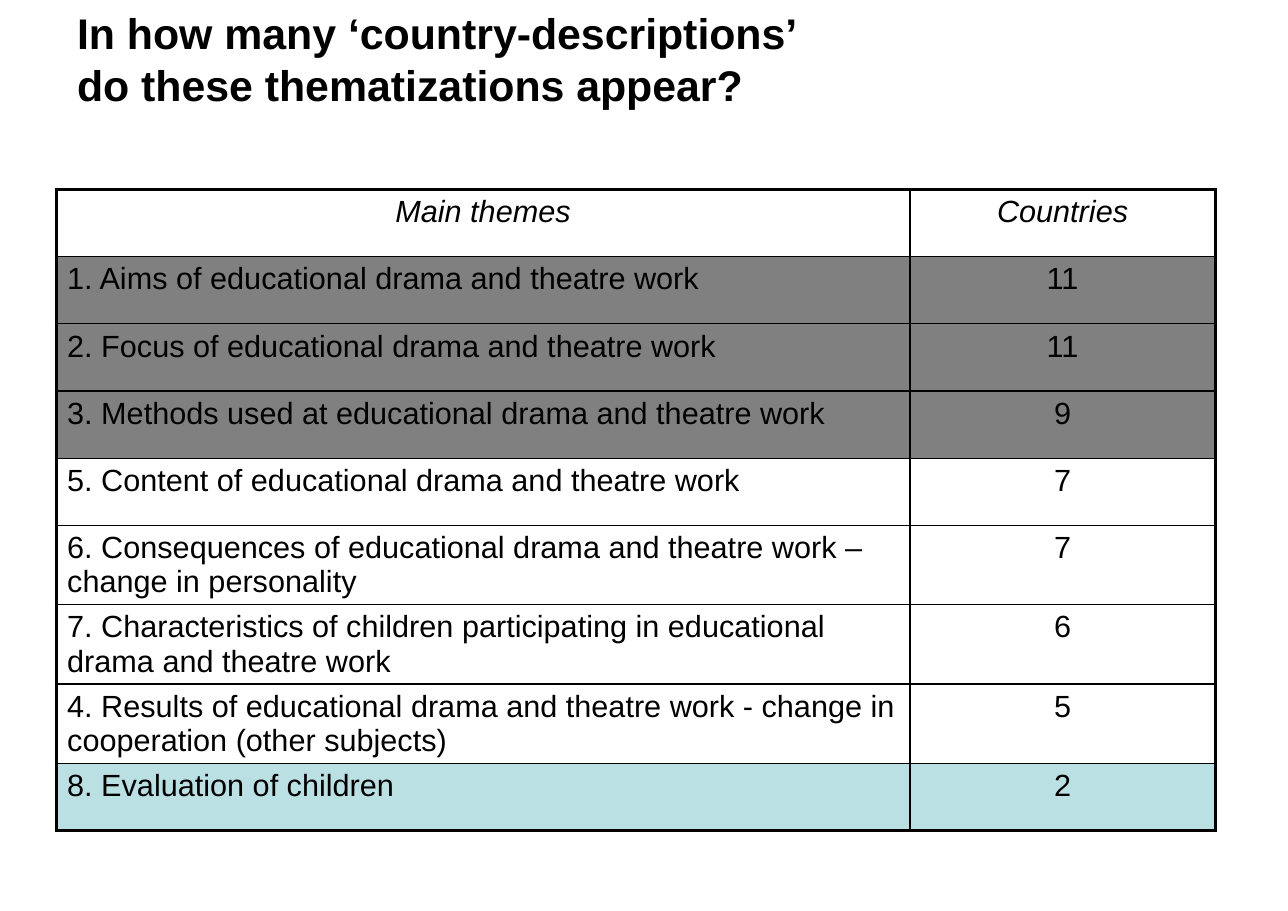
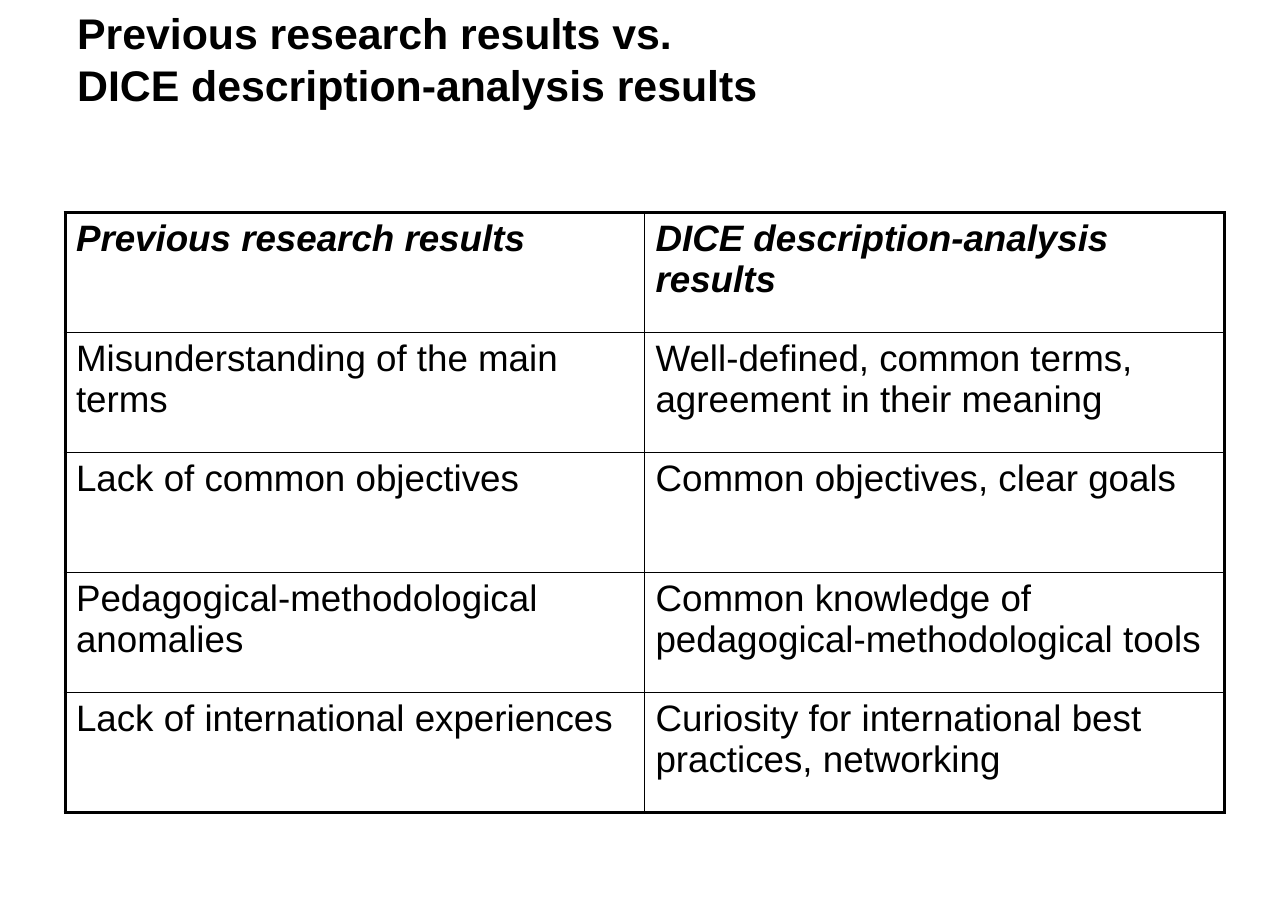
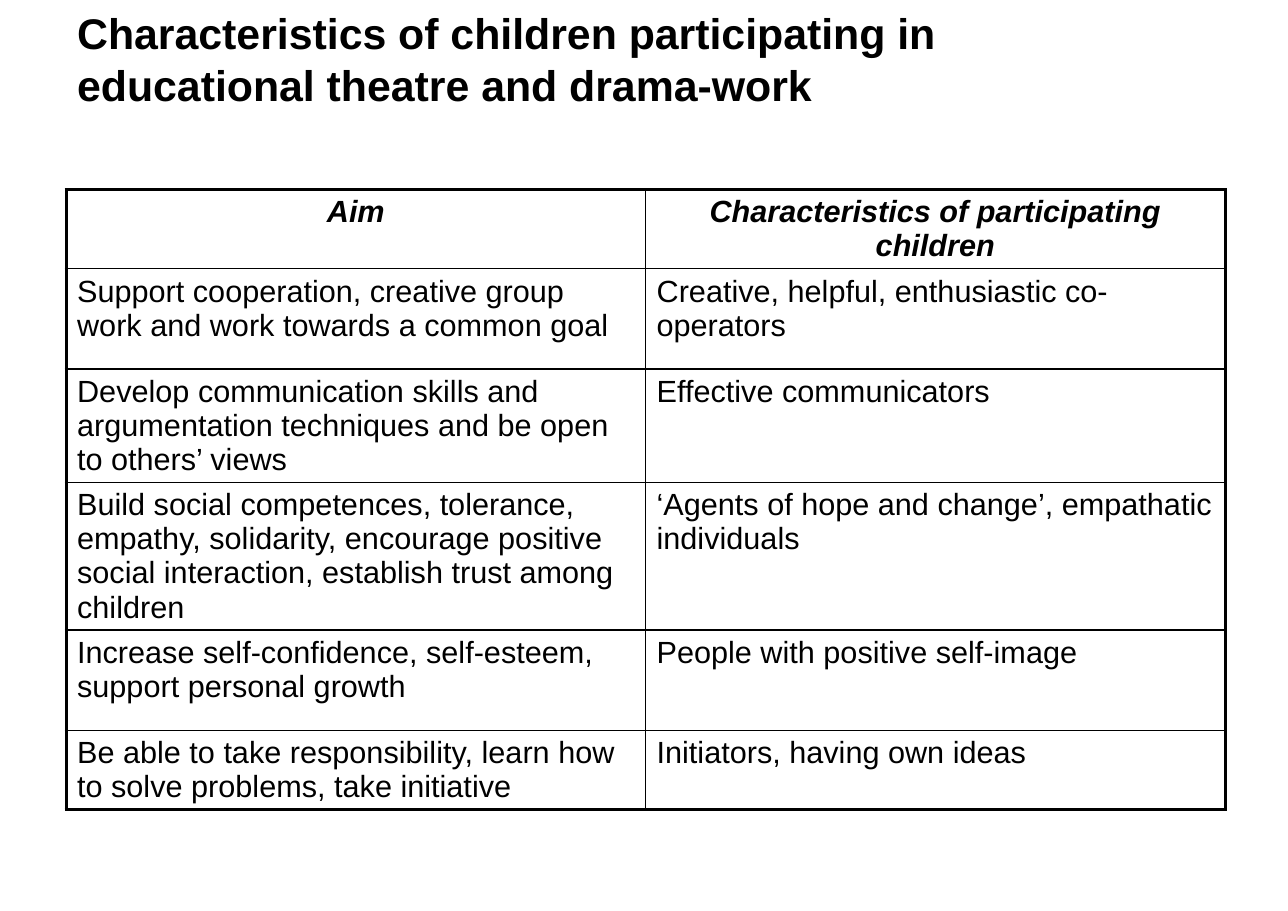
from pptx import Presentation
from pptx.dml.color import RGBColor
from pptx.enum.text import MSO_ANCHOR, MSO_AUTO_SIZE, PP_ALIGN
from pptx.oxml import parse_xml
from pptx.oxml.ns import nsdecls
from pptx.util import Emu, Pt

PX = 9144  # one px is a hundredth of an inch
FONT = "Arial"
BLACK = RGBColor(0x00, 0x00, 0x00)
GRAY = RGBColor(0x80, 0x80, 0x80)
AQUA = RGBColor(0xBB, 0xE0, 0xE3)
OUTER, INNER = Pt(2.25), Pt(1)
LEFT, CENTER = PP_ALIGN.LEFT, PP_ALIGN.CENTER

THEMES = [
    ("Main themes", "Countries"),
    ("1. Aims of educational drama and theatre work", "11"),
    ("2. Focus of educational drama and theatre work", "11"),
    ("3. Methods used at educational drama and theatre work", "9"),
    ("5. Content of educational drama and theatre work", "7"),
    ("6. Consequences of educational drama and theatre work – change in personality", "7"),
    ("7. Characteristics of children participating in educational drama and theatre work", "6"),
    ("4. Results of educational drama and theatre work - change in cooperation (other subjects)", "5"),
    ("8. Evaluation of children", "2"),
]
THEME_FILLS = {1: GRAY, 2: GRAY, 3: GRAY, 8: AQUA}

RESULTS = [
    ("Previous research results", "DICE description-analysis results"),
    ("Misunderstanding of the main terms",
     "Well-defined, common terms, agreement in their meaning"),
    ("Lack of common objectives", "Common objectives, clear goals"),
    ("Pedagogical-methodological anomalies",
     "Common knowledge of pedagogical-methodological tools"),
    ("Lack of international experiences",
     "Curiosity for international best practices, networking"),
]

AIMS = [
    ("Aim", "Characteristics of participating children"),
    ("Support cooperation, creative group work and work towards a common goal",
     "Creative, helpful, enthusiastic co-operators"),
    ("Develop communication skills and argumentation techniques and be open to others’ views",
     "Effective communicators"),
    ("Build social competences, tolerance, empathy, solidarity, encourage positive "
     "social interaction, establish trust among children",
     "‘Agents of hope and change’, empathatic individuals"),
    ("Increase self-confidence, self-esteem, support personal growth",
     "People with positive self-image"),
    ("Be able to take responsibility, learn how to solve problems, take initiative",
     "Initiators, having own ideas"),
]


def px(n):
    return Emu(n * PX)


def format_text(tf, size, align, bold=False, italic=False):
    for p in tf.paragraphs:
        p.alignment = align
        for r in p.runs:
            r.font.name, r.font.size = FONT, Pt(size)
            r.font.bold, r.font.italic = bold, italic
            r.font.color.rgb = BLACK


def add_titled_slide(prs, *lines):
    s = prs.slides.add_slide(prs.slide_layouts[5])
    title = s.shapes.title
    title.left, title.top, title.width, title.height = px(59), px(3), px(1052), px(100)
    tf = title.text_frame
    tf.text = "\v".join(lines)
    tf.auto_size = MSO_AUTO_SIZE.NONE
    tf.vertical_anchor = MSO_ANCHOR.MIDDLE
    tf.margin_left = tf.margin_right = px(11)
    format_text(tf, 28, LEFT, bold=True)
    return s


def set_borders(cell, widths):
    """Draw the left, right, top and bottom border of a cell."""
    tc_pr = cell._tc.get_or_add_tcPr()
    for side, width in zip("LRTB", widths):
        tc_pr.append(parse_xml(
            f'<a:ln{side} {nsdecls("a")} w="{int(width)}"><a:solidFill>'
            f'<a:srgbClr val="{BLACK}"/></a:solidFill></a:ln{side}>'))


def add_grid(s, left, top, cols, heights, rows, size, head_bold=True,
             head_align=LEFT, aligns=(LEFT, LEFT), fills=None):
    """Add a table with a heavy frame, thin inner lines and an italic head row."""
    fills = fills or {}
    table = s.shapes.add_table(len(rows), len(cols), px(left), px(top),
                               px(sum(cols)), px(sum(heights))).table
    table.first_row = table.horz_banding = False
    for col, width in zip(table.columns, cols):
        col.width = px(width)
    for i, (row, height) in enumerate(zip(rows, heights)):
        table.rows[i].height = px(height)
        head = i == 0
        for j, text in enumerate(row):
            cell = table.cell(i, j)
            cell.text = text
            format_text(cell.text_frame, size, head_align if head else aligns[j],
                        bold=head and head_bold, italic=head)
            edges = (j == 0, j == len(cols) - 1, head, i == len(rows) - 1)
            set_borders(cell, [OUTER if edge else INNER for edge in edges])
            if i in fills:
                cell.fill.solid()
                cell.fill.fore_color.rgb = fills[i]
            else:
                cell.fill.background()


def main():
    prs = Presentation()
    prs.slide_width, prs.slide_height = px(1169), px(827)

    # Themes by number of countries
    s = add_titled_slide(prs, "In how many ‘country-descriptions’",
                         "do these thematizations appear?")
    add_grid(s, 51, 172, (775, 277), [61] * 5 + [72] * 3 + [61], THEMES, 20,
             head_bold=False, head_align=CENTER, aligns=(LEFT, CENTER),
             fills=THEME_FILLS)

    # Earlier results against the new ones
    s = add_titled_slide(prs, "Previous research results vs.",
                         "DICE description-analysis results")
    add_grid(s, 59, 193, (526, 526), [109] * 5, RESULTS, 24)

    # Aims and the children taking part
    s = add_titled_slide(prs, "Characteristics of children participating in",
                         "educational theatre and drama-work")
    add_grid(s, 60, 172, (526, 526), [72, 91, 103, 133, 91, 72], AIMS, 20,
             head_align=CENTER)

    prs.save("out.pptx")


if __name__ == "__main__":
    main()
